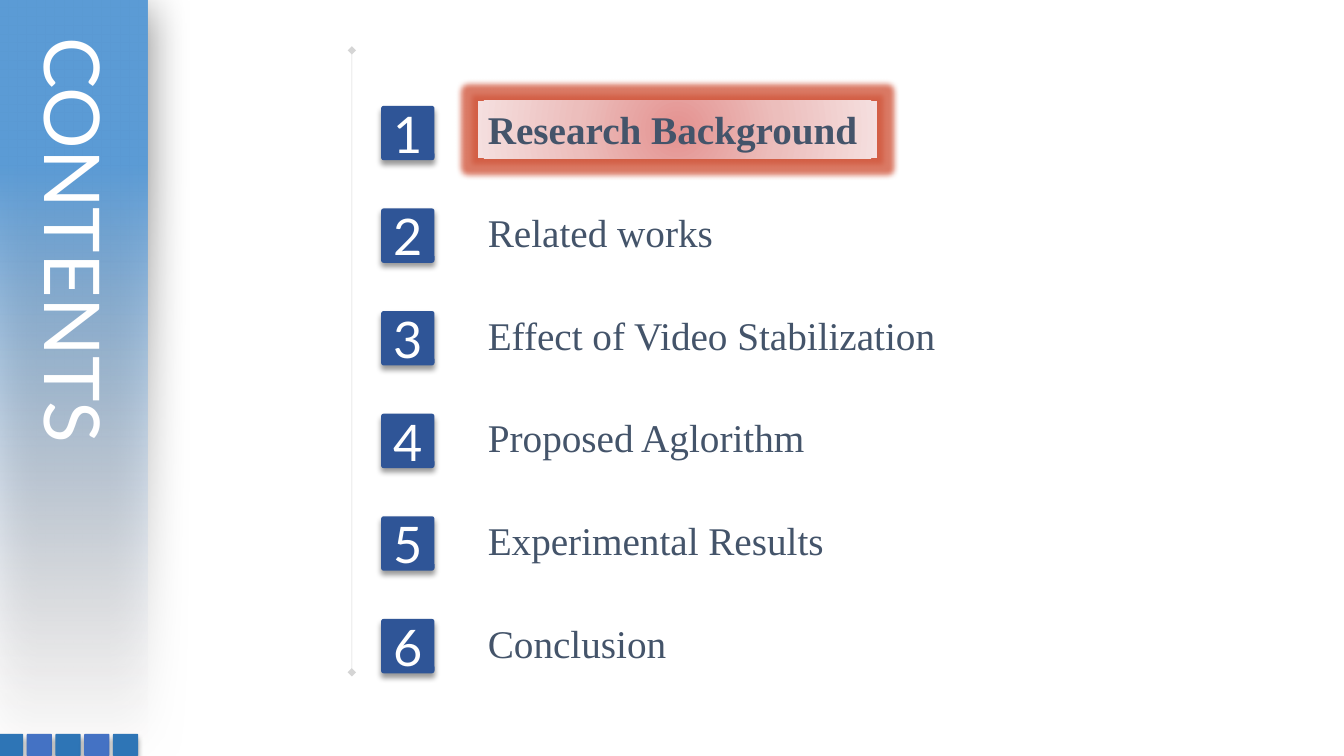
from dataclasses import dataclass

from pptx import Presentation
from pptx.dml.color import RGBColor
from pptx.enum.shapes import MSO_CONNECTOR as Connector, MSO_SHAPE as Preset
from pptx.enum.text import MSO_ANCHOR as Anchor, MSO_AUTO_SIZE as AutoSize, PP_ALIGN as Align
from pptx.oxml import parse_xml
from pptx.oxml.ns import nsdecls, qn
from pptx.shapes.autoshape import Shape
from pptx.util import Inches, Pt

COLORS = {
    "white": "FFFFFF", "black": "000000", "rule": "808080",
    "sidebar": "5B9BD5", "sidebar_fade": "FEF2F0",
    "badge": "2F5597", "tile_dark": "2E75B6", "tile_light": "4472C4",
    "topic": "44546A", "glow": "D2593F",
    "highlight_core": "E49290", "highlight_mid": "ECBEBC", "highlight_edge": "F5DFDF",
}
HEADING_FONT, TOPIC_FONT = "Lato", "Times New Roman"
TOPIC_FORMAT = {"name": TOPIC_FONT, "size": Pt(28)}
ROW_PITCH = 1.018
TILE_PITCH = 0.285


@dataclass(frozen=True)
class Box:
    left: float
    top: float
    width: float
    height: float

    def lengths(self) -> list:
        return [Inches(v) for v in (self.left, self.top, self.width, self.height)]


@dataclass(frozen=True)
class Shadow:
    opacity: int
    blur: float
    distance: float
    angle: int


@dataclass(frozen=True)
class Topic:
    title: str
    width: float
    current: bool = False


TOPICS = [
    Topic("Research Background", 3.96, current=True),
    Topic("Related works", 2.59),
    Topic("Effect of Video Stabilization", 4.85),
    Topic("Proposed Aglorithm", 3.55),
    Topic("Experimental Results", 3.77),
    Topic("Conclusion", 2.06),
]
SMALL_SHADOW = Shadow(40, 4, 3, 90)
SIDEBAR_SHADOW = Shadow(50, 31, 6, 97)


def color_xml(color: str, opacity: int = 100) -> str:
    return f'<a:srgbClr val="{COLORS[color]}"><a:alpha val="{opacity * 1000}"/></a:srgbClr>'


def drawing_element(tag: str, attributes: str, content: str):
    return parse_xml(f'<a:{tag} {nsdecls("a")} {attributes}>{content}</a:{tag}>')


def add_effect(shape: Shape, effect) -> None:
    shape.element.spPr.find(qn("a:effectLst")).append(effect)


def add_shadow(shape: Shape, shadow: Shadow) -> None:
    attributes = (f'blurRad="{Pt(shadow.blur)}" dist="{Pt(shadow.distance)}" '
                  f'dir="{shadow.angle * 60000}" algn="t" rotWithShape="0"')
    add_effect(shape, drawing_element("outerShdw", attributes, color_xml("black", shadow.opacity)))


def set_gradient(shape: Shape, stops: list[tuple[int, str, int]], direction: str) -> None:
    """Fill with (position, color, opacity) stops; direction is the a:lin or a:path XML."""
    stops_xml = "".join(f'<a:gs pos="{position * 1000}">{color_xml(color, opacity)}</a:gs>'
                        for position, color, opacity in stops)
    shape.fill.background()
    properties = shape.element.spPr
    properties.replace(
        properties.find(qn("a:noFill")),
        drawing_element("gradFill", 'rotWithShape="1"', f"<a:gsLst>{stops_xml}</a:gsLst>{direction}"))


def add_plain_shape(slide, preset: Preset, box: Box, color: str) -> Shape:
    shape = slide.shapes.add_shape(preset, *box.lengths())
    shape.fill.solid()
    shape.fill.fore_color.rgb = RGBColor.from_string(COLORS[color])
    shape.line.fill.background()
    shape.shadow.inherit = False
    return shape


def add_rounded_tile(slide, box: Box, color: str) -> Shape:
    tile = add_plain_shape(slide, Preset.ROUNDED_RECTANGLE, box, color)
    tile.adjustments[0] = 0.05
    add_shadow(tile, SMALL_SHADOW)
    return tile


def write(shape: Shape, text: str, color: str, font_format: dict, align: Align = Align.LEFT) -> None:
    paragraph = shape.text_frame.paragraphs[0]
    paragraph.alignment = align
    run = paragraph.add_run()
    run.text = text
    run.font.color.rgb = RGBColor.from_string(COLORS[color])
    for attribute, value in font_format.items():
        setattr(run.font, attribute, value)


def add_timeline(slide) -> None:
    x = Inches(3.49)
    timeline = slide.shapes.add_connector(Connector.STRAIGHT, x, Inches(0.5), x, Inches(6.67))
    timeline.line.width = Pt(0.25)
    timeline.line.color.rgb = RGBColor.from_string(COLORS["rule"])
    outline = timeline.line._get_or_add_ln()
    outline.find(qn("a:solidFill"))[0].append(drawing_element("alpha", 'val="33000"', ""))
    for end in ("headEnd", "tailEnd"):
        outline.append(drawing_element(end, 'type="diamond"', ""))
    timeline.element.spPr.append(drawing_element("effectLst", "", ""))


def add_sidebar(slide) -> None:
    sidebar = add_plain_shape(slide, Preset.RECTANGLE, Box(-3, 2.99, 7.46, 1.47), "sidebar")
    sidebar.rotation = 90
    set_gradient(sidebar, [(0, "sidebar_fade", 0), (78, "sidebar", 100)],
                 '<a:lin ang="10800000" scaled="0"/>')
    add_shadow(sidebar, SIDEBAR_SHADOW)

    for index in range(5):
        color = "tile_light" if index % 2 else "tile_dark"
        add_rounded_tile(slide, Box(-0.02 + index * TILE_PITCH, 7.28, 0.25, 0.22), color)

    heading = slide.shapes.add_textbox(*Box(0.12, 0.27, 1.13, 4.94).lengths())
    heading.text_frame.word_wrap = True
    heading.text_frame.auto_size = AutoSize.SHAPE_TO_FIT_TEXT
    heading.text_frame._txBody.bodyPr.set("vert", "eaVert")
    write(heading, "CONTENTS", "white", {"name": HEADING_FONT, "size": Pt(55)})


def add_highlight(slide, box: Box) -> Shape:
    highlight = add_plain_shape(slide, Preset.RECTANGLE, box, "highlight_core")
    set_gradient(
        highlight,
        [(0, "highlight_core", 100), (50, "highlight_mid", 100), (100, "highlight_edge", 100)],
        '<a:path path="circle"><a:fillToRect l="50000" t="50000" r="50000" b="50000"/></a:path>')
    add_effect(highlight, drawing_element("glow", f'rad="{Pt(8)}"', color_xml("glow", 80)))
    return highlight


def add_topic(slide, index: int, topic: Topic) -> None:
    offset = index * ROW_PITCH
    badge = add_rounded_tile(slide, Box(3.78, 1.05 + offset, 0.53, 0.54), "badge")
    badge.text_frame.vertical_anchor = Anchor.MIDDLE
    write(badge, str(index + 1), "white", {"name": HEADING_FONT, "size": Pt(36)}, Align.CENTER)

    box = Box(4.74, 1 + offset, topic.width, 0.57)
    label = add_highlight(slide, box) if topic.current else slide.shapes.add_textbox(*box.lengths())
    label.text_frame.word_wrap = topic.current
    label.text_frame.auto_size = AutoSize.SHAPE_TO_FIT_TEXT
    label.text_frame.vertical_anchor = Anchor.TOP
    write(label, topic.title, "topic", TOPIC_FORMAT | {"bold": topic.current})


def main() -> None:
    presentation = Presentation()
    presentation.slide_width, presentation.slide_height = Inches(13.33), Inches(7.5)
    slide = presentation.slides.add_slide(presentation.slide_layouts[6])
    add_timeline(slide)
    add_sidebar(slide)
    for index, topic in enumerate(TOPICS):
        add_topic(slide, index, topic)
    presentation.save("out.pptx")


if __name__ == "__main__":
    main()
